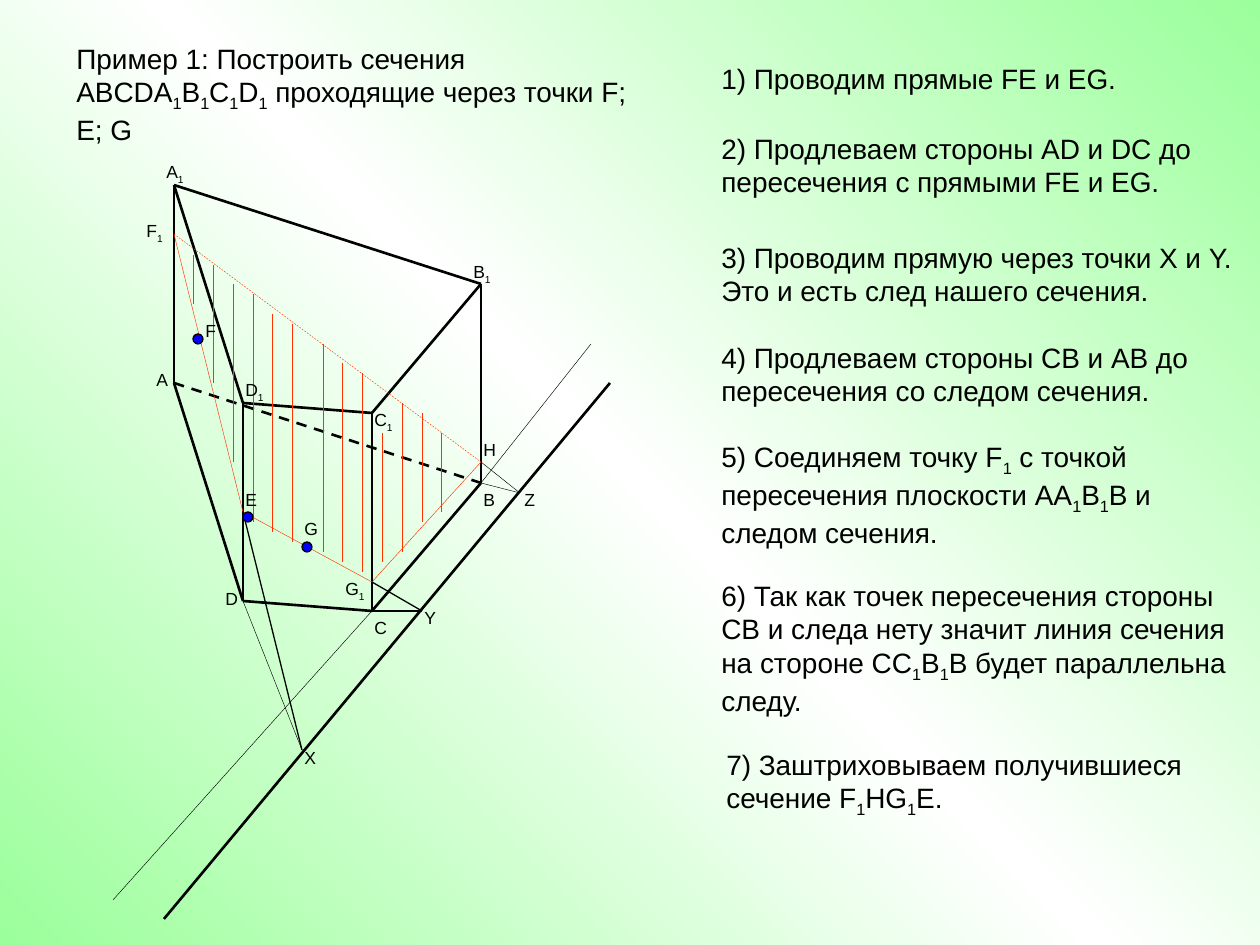
from copy import deepcopy

from pptx import Presentation
from pptx.dml.color import RGBColor
from pptx.enum.dml import MSO_LINE_DASH_STYLE as DASH
from pptx.enum.shapes import MSO_CONNECTOR, MSO_SHAPE
from pptx.enum.text import MSO_AUTO_SIZE
from pptx.oxml.ns import qn
from pptx.util import Emu, Inches, Pt

PX = Inches(1) // 126

BLACK = RGBColor(0x00, 0x00, 0x00)
WHITE = RGBColor(0xFF, 0xFF, 0xFF)
GREEN = RGBColor(0x9B, 0xFF, 0x9B)
BLUE = RGBColor(0x00, 0x00, 0xFF)
RED = RGBColor(0xFF, 0x33, 0x00)

THIN, MEDIUM, THICK = 0.25, 0.75, 1.5

POINTS = {
    "A": (174, 383), "B": (481, 483), "C": (372, 611), "D": (243, 601),
    "A1": (174, 185), "B1": (481, 284), "C1": (372, 413), "D1": (243, 403),
    "F1": (174, 234), "E": (243, 512), "G1": (372, 582), "H": (481, 462),
    "X": (302, 750), "Y": (422, 611), "Z": (520, 493),
    "trace start": (164, 919), "trace end": (610, 383),
    "CB start": (113, 900), "CB end": (591, 344),
}

# (from, to, colour, width, dashed)
PRISM = [(a, b, BLACK, THICK, False) for a, b in (
    ("A1", "A"), ("D1", "D"), ("C1", "C"), ("B1", "B"),
    ("A", "D"), ("D", "C"), ("C", "B"),
    ("A1", "D1"), ("D1", "C1"), ("C1", "B1"), ("A1", "B1"),
)] + [("A", "B", BLACK, THICK, True)]
SECTION = [
    ("E", "G1", RED, THIN, False),
    ("F1", "E", RED, THIN, False),
    ("F1", "H", RED, THIN, True),
    ("G1", "H", RED, THIN, False),
]
CONSTRUCTION = [
    ("trace start", "trace end", BLACK, THICK, False),
    ("D", "X", BLACK, THIN, False),
    ("C", "Y", BLACK, MEDIUM, False),
    ("H", "Z", BLACK, THIN, False),
    ("B", "Z", BLACK, THIN, False),
    ("C", "CB start", BLACK, THIN, False),
    ("B", "CB end", BLACK, THIN, False),
    ("G1", "Y", BLACK, MEDIUM, False),
    ("E", "X", BLACK, MEDIUM, False),
]

# x, top, bottom
HATCHING = [
    (193, 255, 304), (213, 265, 383), (233, 284, 462), (253, 294, 522),
    (272, 314, 532), (292, 324, 542), (323, 344, 552), (342, 363, 562),
    (362, 373, 572), (382, 433, 562), (402, 403, 552), (422, 413, 522),
    (441, 433, 512),
]

GIVEN_POINTS = [(193, 334), (302, 542), (243, 512)]

# An underscore lowers the character after it
LABELS = [
    ("A", 144, 363), ("A_1", 154, 155), ("B_1", 461, 255), ("B", 471, 483),
    ("C", 362, 611), ("C_1", 362, 403), ("D_1", 233, 373), ("D", 213, 582),
    ("F", 193, 314), ("E", 233, 483), ("G", 292, 512), ("F_1", 134, 214),
    ("G_1", 333, 572), ("H", 471, 433), ("X", 292, 741), ("Y", 412, 601),
    ("Z", 512, 483),
]

TITLE = "Пример 1: Построить сечения ABCDA_1B_1C_1D_1 проходящие через точки F; E; G"

# text, left, top, height
STEPS = [
    ("1) Проводим прямые FE и EG.", 709, 55, 46),
    ("2) Продлеваем стороны AD и DC до пересечения с прямыми FE и EG.", 709, 125, 81),
    ("3) Проводим прямую через точки X и Y. Это и есть след нашего сечения.", 709, 234, 81),
    ("4) Продлеваем стороны CB и AB до пересечения со следом сечения.", 709, 334, 81),
    ("5) Соединяем точку F_1 с точкой пересечения плоскости AA_1B_1B и следом сечения.",
     709, 433, 113),
    ("6) Так как точек пересечения стороны CB и следа нету значит линия сечения "
     "на стороне CC_1B_1B будет параллельна следу.", 709, 572, 147),
    ("7) Заштриховываем получившиеся сечение F_1HG_1E.", 714, 741, 81),
]


def px(*lengths):
    return [Emu(n * PX) for n in lengths]


def set_background(slide):
    fill = slide.background.fill
    fill.gradient()
    fill.gradient_angle = 45
    stop_list = slide._element.xpath(".//a:gsLst")[0]
    stop_list.append(deepcopy(stop_list[-1]))
    for stop, position, color in zip(fill.gradient_stops, (0, 0.5, 1), (GREEN, WHITE, GREEN)):
        stop.position = position
        stop.color.rgb = color


def add_line(slide, start, end, color, width, dashed=False):
    sp = slide.shapes.add_connector(MSO_CONNECTOR.STRAIGHT, *px(*start, *end))
    sp.line.color.rgb = color
    sp.line.width = Pt(width)
    if dashed:
        sp.line.dash_style = DASH.DASH
    spPr = sp._element.spPr
    spPr.append(spPr.makeelement(qn("a:effectLst"), {}))


def add_dot(slide, left, top, size=10):
    sp = slide.shapes.add_shape(MSO_SHAPE.OVAL, *px(left, top, size, size))
    sp.shadow.inherit = False
    sp.fill.solid()
    sp.fill.fore_color.rgb = BLUE
    sp.line.color.rgb = BLACK
    sp.line.width = Pt(MEDIUM)


def add_run(p, text, size, lowered=False):
    r = p.add_run()
    r.text = text
    r.font.name = "Arial"
    r.font.size = Pt(size)
    r.font.color.rgb = BLACK
    if lowered:
        r.font._element.set("baseline", "-25000")


def add_text(slide, text, left, top, width, height, size):
    tf = slide.shapes.add_textbox(*px(left, top, width, height)).text_frame
    tf.word_wrap = True
    tf.auto_size = MSO_AUTO_SIZE.SHAPE_TO_FIT_TEXT
    p = tf.paragraphs[0]
    first, *rest = text.split("_")
    add_run(p, first, size)
    for part in rest:
        add_run(p, part[0], size, lowered=True)
        if part[1:]:
            add_run(p, part[1:], size)


def main():
    prs = Presentation()
    prs.slide_width, prs.slide_height = Inches(10), Inches(7.5)
    slide = prs.slides.add_slide(prs.slide_layouts[6])
    set_background(slide)

    for start, end, color, width, dashed in PRISM + SECTION + CONSTRUCTION:
        add_line(slide, POINTS[start], POINTS[end], color, width, dashed)
    for x, top, bottom in HATCHING:
        add_line(slide, (x, top), (x, bottom), RED, THIN)
    for left, top in GIVEN_POINTS:
        add_dot(slide, left, top)

    for text, left, top in LABELS:
        add_text(slide, text, left, top, 50 if "_" in text else 32, 34, 10)
    add_text(slide, TITLE, 64, 35, 586, 113, 16)
    for text, left, top, height in STEPS:
        add_text(slide, text, left, top, 1260 - left, height, 16)

    prs.save("out.pptx")


if __name__ == "__main__":
    main()
